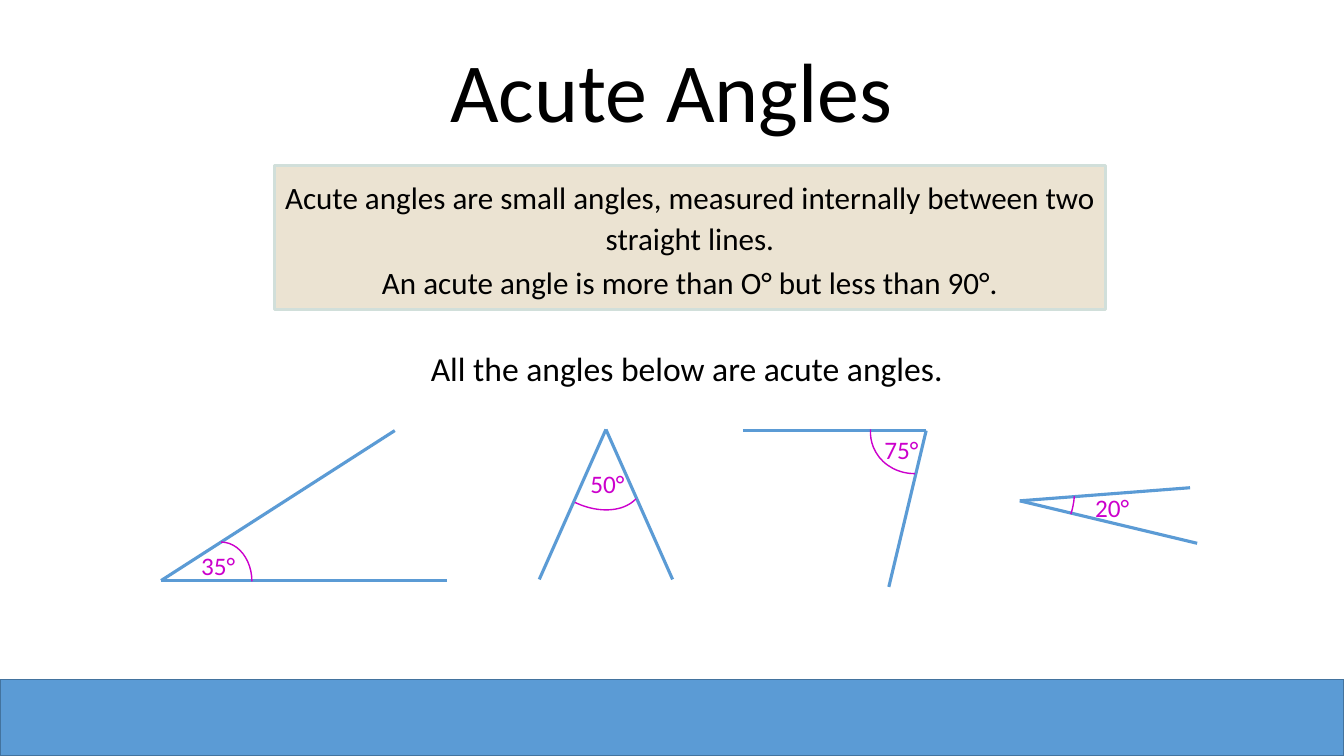
from lxml import etree
from pptx import Presentation
from pptx import util as u
from pptx.dml.color import RGBColor
from pptx.enum import shapes, text
from pptx.oxml import ns

BLUE = RGBColor(0x5B, 0x9B, 0xD5)
NAVY = RGBColor(0x43, 0x73, 0x9E)
SAND = RGBColor(0xEB, 0xE3, 0xD2)
MINT = RGBColor(0xD1, 0xDF, 0xDA)
PINK = RGBColor(0xCC, 0x00, 0xCC)
BLACK = RGBColor(0, 0, 0)
WIDE, HIGH = 33.87, 19.05

CENTER = {"alignment": text.PP_ALIGN.CENTER}
HEAD = {**CENTER, "line_spacing": 0.9}
RULE = {**CENTER, "line_spacing": 1.1, "space_before": u.Pt(10)}
LIMIT = {**RULE, "line_spacing": 0.8}
LABEL = {"alignment": text.PP_ALIGN.LEFT}

ANGLES = [
    {"name": "35°", "tip": (4.06, 14.63), "ends": [(5.89, -3.78), (7.21, 0)],
     "box": (0.74, -0.97, 1.55, 1.98), "turn": 0, "sweep": (162, 0),
     "label": (0.76, -0.89)},
    {"name": "50°", "tip": (15.27, 10.82), "ends": [(-1.68, 3.78), (1.68, 3.78)],
     "box": (-1.42, -0.56, 2.01, 2.92), "turn": 119, "sweep": (166.16, 211.38),
     "label": (-0.64, 0.86)},
    {"name": "75°", "tip": (23.34, 10.85), "ends": [(-4.62, 0), (-0.94, 3.94)],
     "box": (-1.42, -1.14, 2.41, 2.21), "turn": 157.7, "sweep": (177.5, 13.18),
     "label": (-1.3, -0.03)},
    {"name": "20°", "tip": (25.7, 12.62), "ends": [(4.29, -0.33), (4.47, 1.07)],
     "box": (-2.36, -2.13, 3.81, 3.51), "turn": 44.3, "sweep": (194.29, 202.72),
     "label": (1.65, -0.33)},
]


def cms(*nums):
    return [u.Cm(num) for num in nums]


def apply(item, form):
    for key, value in form.items():
        setattr(item, key, value)


def write(frame, rows, size, color=BLACK):
    frame.word_wrap = True
    for i, (words, form) in enumerate(rows):
        para = frame.paragraphs[0] if i == 0 else frame.add_paragraph()
        apply(para, form)
        run = para.add_run()
        run.text = words
        apply(run.font, {"name": "Calibri", "size": u.Pt(size)})
        run.font.color.rgb = color


def stroke(item, color, width):
    item.line.color.rgb = color
    item.line.width = u.Pt(width)


def block(slide, kind, box, fill, color, width):
    item = slide.shapes.add_shape(kind, *cms(*box))
    item.shadow.inherit = False
    if fill is None:
        item.fill.background()
    else:
        item.fill.solid()
        item.fill.fore_color.rgb = fill
    stroke(item, color, width)
    return item


def title(slide, box):
    item = slide.shapes.title
    apply(item, dict(zip(("left", "top", "width", "height"), cms(*box))))
    item.text_frame.vertical_anchor = text.MSO_ANCHOR.BOTTOM
    write(item.text_frame, [("Acute Angles", HEAD)], 60)


def footer(slide, box):
    block(slide, shapes.MSO_SHAPE.RECTANGLE, box, BLUE, NAVY, 1)


def panel(slide, box):
    item = block(slide, shapes.MSO_SHAPE.RECTANGLE, box, SAND, MINT, 2.25)
    write(item.text_frame, [
        ("Acute angles are small angles, measured internally between two "
         "straight lines.", RULE),
        ("An acute angle is more than O° but less than 90°.", LIMIT),
    ], 22.2)


def note(slide, box, words, form, size, color=BLACK):
    item = slide.shapes.add_textbox(*cms(*box))
    write(item.text_frame, [(words, form)], size, color)


def ray(slide, start, end):
    line = slide.shapes.add_connector(
        shapes.MSO_CONNECTOR.STRAIGHT, *cms(*start, *end))
    stroke(line, BLUE, 2.25)
    etree.SubElement(line._element.spPr, ns.qn("a:effectLst"))


def angle(slide, data):
    x, y = data["tip"]
    for dx, dy in data["ends"]:
        ray(slide, (x + dx, y + dy), (x, y))
    dx, dy, wide, high = data["box"]
    arc = block(slide, shapes.MSO_SHAPE.ARC, (x + dx, y + dy, wide, high),
                None, PINK, 1)
    arc.rotation = data["turn"]
    for i, value in enumerate(data["sweep"]):
        arc.adjustments[i] = value
    dx, dy = data["label"]
    note(slide, (x + dx, y + dy, 3.53, 1.02), data["name"], LABEL, 18, PINK)


def main():
    deck = Presentation()
    deck.slide_width, deck.slide_height = cms(WIDE, HIGH)
    slide = deck.slides.add_slide(deck.slide_layouts.get_by_name("Title Only"))
    footer(slide, (0, 17.12, WIDE, HIGH - 17.12))
    title(slide, (1.83, 0, 30.18, 3.68))
    panel(slide, (6.91, 4.17, 20.96, 3.63))
    note(slide, (8.05, 8.64, 18.52, 1.27),
         "All the angles below are acute angles.", CENTER, 24)
    for data in ANGLES:
        angle(slide, data)
    deck.save("out.pptx")


if __name__ == "__main__":
    main()
